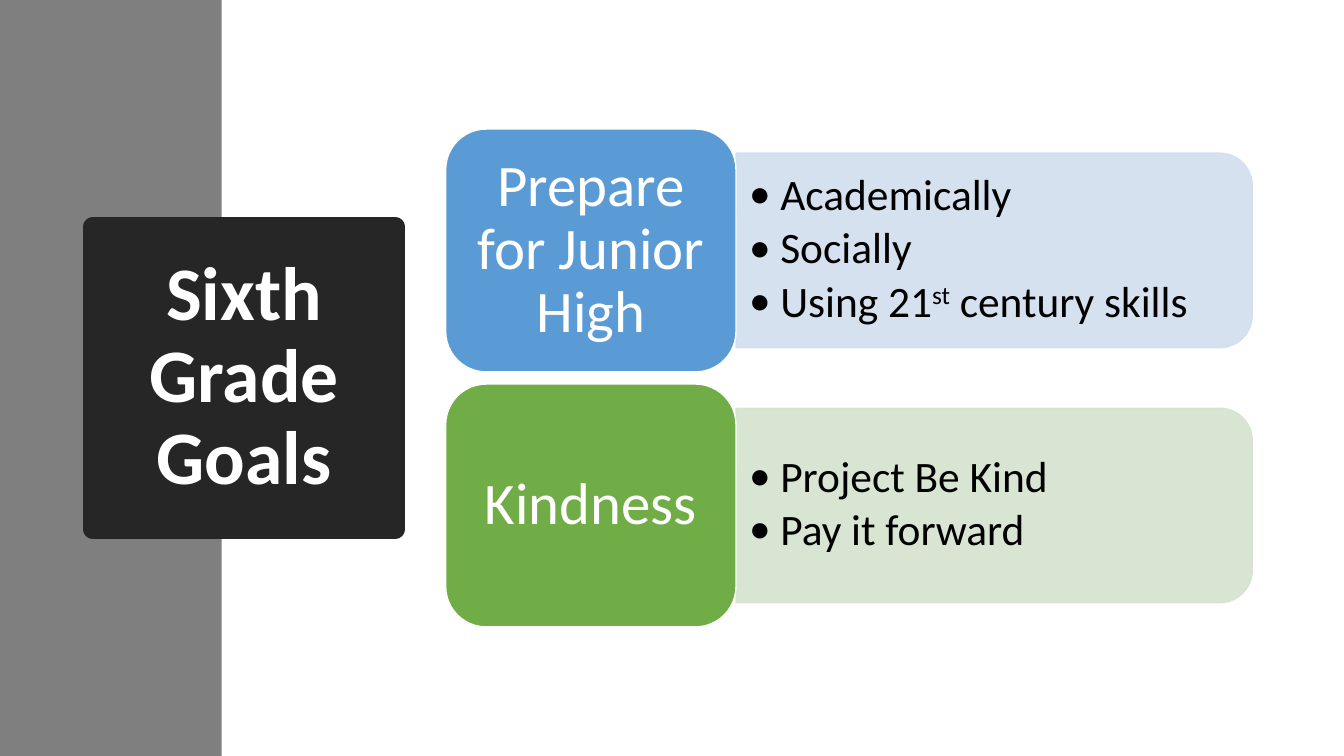
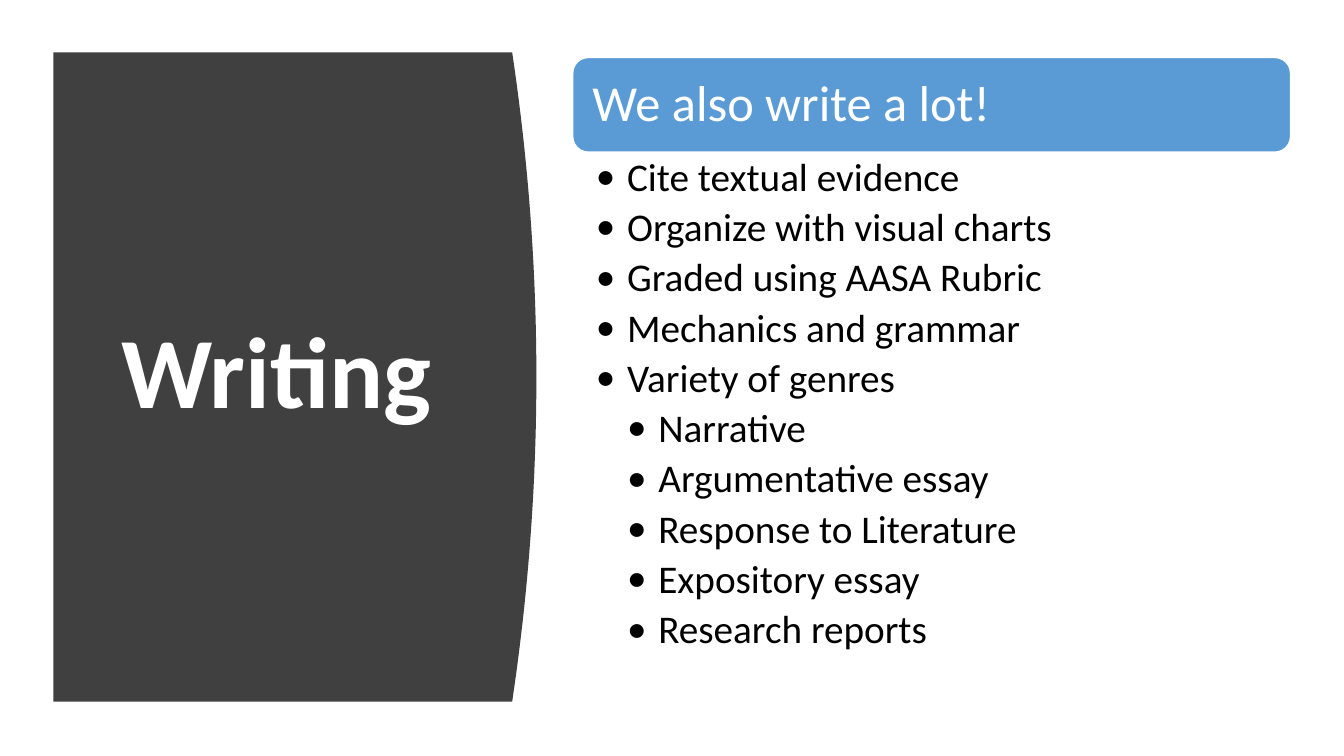
from pptx import Presentation, util as u
from pptx.dml.color import RGBColor
from pptx.enum import shapes, text
from pptx.oxml.ns import qn
from lxml import etree

HUES = {
    "band": "7F7F7F", "badge": "262626", "panel": "404040",
    "white": "FFFFFF", "black": "000000",
    "blue": "5B9BD5", "pale blue": "D2DEEF",
    "green": "70AD47", "pale green": "D5E3CF",
}
FONT = "Calibri"
INDENT = 0.31
KIND = shapes.MSO_SHAPE
ALIGN = text.PP_ALIGN
ANCHOR = text.MSO_ANCHOR

GOALS = [
    ("Prepare for Junior High", "blue",
     ["Academically", "Socially", "Using 21^st^ century skills"]),
    ("Kindness", "green", ["Project Be Kind", "Pay it forward"]),
]
TASKS = [
    ("Cite textual evidence", 0), ("Organize with visual charts", 0),
    ("Graded using AASA Rubric", 0), ("Mechanics and grammar", 0),
    ("Variety of genres", 0), ("Narrative", 1), ("Argumentative essay", 1),
    ("Response to Literature", 1), ("Expository essay", 1),
    ("Research reports", 1),
]


def hue(name):
    return RGBColor.from_string(HUES[name])


def inch(box):
    return [u.Inches(n) for n in box]


def paint(shape, fill, line=None, width=1):
    shape.shadow.inherit = False
    shape.fill.solid()
    shape.fill.fore_color.rgb = hue(fill)
    if line:
        shape.line.color.rgb = hue(line)
        shape.line.width = u.Pt(width)
    else:
        shape.line.fill.background()


def fade(shape, part):
    for tint in shape.element.spPr.iter(qn("a:srgbClr")):
        etree.SubElement(tint, qn("a:alpha")).set("val", str(part * 1000))


def add_box(slide, kind, box, fill, line=None):
    shape = slide.shapes.add_shape(kind, *inch(box))
    paint(shape, fill, line)
    return shape


def frame_up(frame, pads, anchor):
    frame.word_wrap = True
    frame.auto_size = text.MSO_AUTO_SIZE.NONE
    frame.vertical_anchor = anchor
    (frame.margin_left, frame.margin_top,
     frame.margin_right, frame.margin_bottom) = inch(pads)


def style(para, size, colour, align=ALIGN.LEFT, bold=False):
    para.alignment = align
    para.line_spacing = 0.9
    for run in para.runs:
        font = run.font
        font.name, font.size, font.bold = FONT, u.Pt(size), bold
        font.color.rgb = hue(colour)


def set_title(slide, words, box, size):
    title = slide.shapes.title
    title.left, title.top, title.width, title.height = inch(box)
    frame_up(title.text_frame, (0.1, 0.05, 0.1, 0.05), ANCHOR.MIDDLE)
    title.text_frame.text = words
    style(title.text_frame.paragraphs[0], size, "white", ALIGN.CENTER, True)
    slide.shapes.element.append(title.element)
    return title


def add_card(slide, words, box, fill, size, pads, align):
    card = add_box(slide, KIND.ROUNDED_RECTANGLE, box, fill, "white")
    frame_up(card.text_frame, pads, ANCHOR.MIDDLE)
    card.text_frame.text = words
    style(card.text_frame.paragraphs[0], size, "white", align)


def set_bullet(para, depth):
    para.level = depth
    props = para._p.get_or_add_pPr()
    props.set("marL", str(u.Inches(INDENT * (depth + 1))))
    props.set("indent", str(u.Inches(-INDENT)))
    etree.SubElement(props, qn("a:buFont")).set("typeface", FONT)
    etree.SubElement(props, qn("a:buChar")).set("char", "•")


def add_list(slide, items, box, size, gap, pads, anchor):
    frame = slide.shapes.add_textbox(*inch(box)).text_frame
    frame_up(frame, pads, anchor)
    for i, (words, depth) in enumerate(items):
        para = frame.add_paragraph() if i else frame.paragraphs[0]
        for j, piece in enumerate(words.split("^")):
            run = para.add_run()
            run.text = piece
            if j % 2:
                run._r.get_or_add_rPr().set("baseline", "30000")
        style(para, size, "black")
        para.space_after = u.Pt(gap)
        set_bullet(para, depth)


def add_goal(slide, box, name, tone, items):
    left, top, wide, high = box
    card, tall = 2.88, 1.93
    span = wide - card
    mid = left + card + span / 2
    tab = add_box(slide, KIND.ROUND_2_SAME_RECTANGLE,
                  (mid - tall / 2, top + high / 2 - span / 2, tall, span),
                  "pale " + tone, "pale " + tone)
    tab.rotation = 90
    fade(tab, 90)
    add_list(slide, [(item, 0) for item in items],
             (left + card, top + 0.33, span - 0.09, high - 0.67),
             31, 4.8, (0.13, 0.06, 0.13, 0.06), ANCHOR.MIDDLE)
    add_card(slide, name, (left, top, card, high), tone, 42,
             (0.17, 0.09, 0.17, 0.09), ALIGN.CENTER)


def add_panel(slide, box, bulge):
    left, top, wide, high = box
    edge = left + wide - bulge
    steps = 40
    curve = []
    for i in range(steps + 1):
        part = i / steps
        push = bulge * (1 - (2 * part - 1) ** 2)
        curve.append(inch((edge + push, top + high * part)))
    form = slide.shapes.build_freeform(*inch((left, top)))
    form.add_line_segments(curve + [inch((left, top + high))], close=True)
    paint(form.convert_to_shape(), "panel")


def goals_slide(slide):
    add_box(slide, KIND.RECTANGLE, (0, 0, 2.2, 7.5), "band")
    badge = set_title(slide, "Sixth Grade Goals", (0.92, 2.25, 3, 3), 54)
    paint(badge, "badge", "badge", 13.75)
    high, pitch = 2.41, 2.53
    for i, goal in enumerate(GOALS):
        add_goal(slide, (4.42, 1.28 + i * pitch, 8, high), *goal)


def writing_slide(slide):
    add_panel(slide, (0.53, 0.52, 4.79, 6.44), 0.24)
    set_title(slide, "Writing", (0.87, 1.11, 3.74, 5.24), 72)
    left, top, wide, high = 5.68, 0.57, 7.12, 0.94
    add_card(slide, "We also write a lot!", (left, top, wide, high),
             "blue", 36, (0.15, 0.15, 0.15, 0.15), ALIGN.LEFT)
    add_list(slide, TASKS, (left, top + high, wide, 5.38), 28, 5.7,
             (0.23, 0.05, 0.28, 0.05), ANCHOR.TOP)


def main():
    deck = Presentation()
    deck.slide_width, deck.slide_height = inch((13.33, 7.5))
    for build in (goals_slide, writing_slide):
        build(deck.slides.add_slide(deck.slide_layouts[5]))
    deck.save("out.pptx")


if __name__ == "__main__":
    main()
